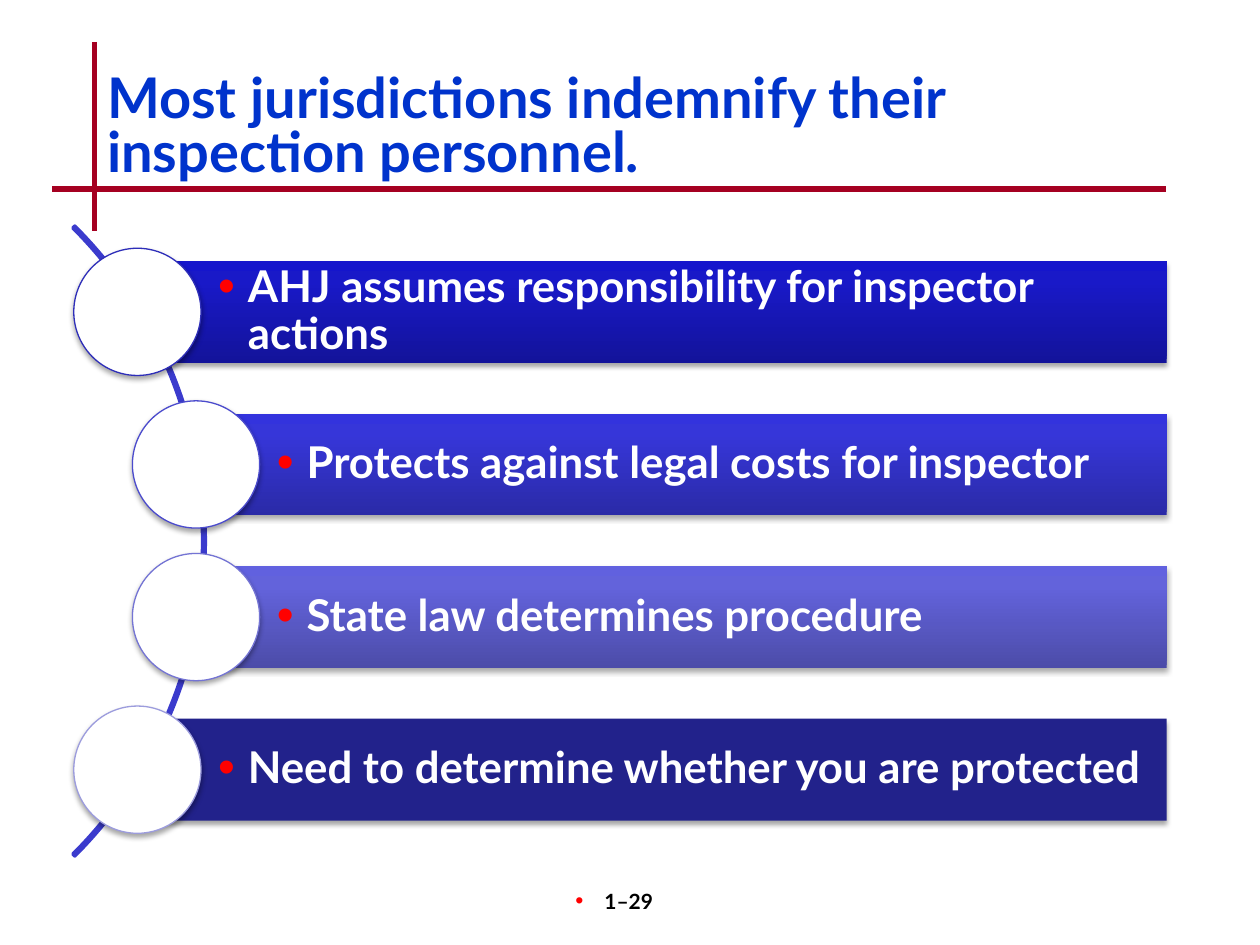
from lxml import etree
from pptx import Presentation
from pptx.dml.color import RGBColor
from pptx.enum.shapes import MSO_CONNECTOR, MSO_SHAPE
from pptx.enum.text import MSO_ANCHOR, MSO_AUTO_SIZE, PP_ALIGN
from pptx.oxml.ns import qn
from pptx.util import Pt

LINE = MSO_CONNECTOR.STRAIGHT
RECT, OVAL, ARC = MSO_SHAPE.RECTANGLE, MSO_SHAPE.OVAL, MSO_SHAPE.BLOCK_ARC
LEFT, CENTER = PP_ALIGN.LEFT, PP_ALIGN.CENTER
TOP, MIDDLE, NONE = MSO_ANCHOR.TOP, MSO_ANCHOR.MIDDLE, MSO_AUTO_SIZE.NONE

WHITE = RGBColor(0xFF, 0xFF, 0xFF)
BLACK = RGBColor(0, 0, 0)
BLUE = RGBColor(0x00, 0x33, 0xCC)
MAROON = RGBColor(0xA5, 0x00, 0x21)
CURVE = RGBColor(0x3B, 0x3B, 0xCD)
NAVY = RGBColor(0x22, 0x22, 0x8B)

# Content
TITLE = "Most jurisdictions indemnify their inspection personnel."
PAGE = "1–29"
# text, bar left, gradient from bottom to top (or solid fill), ring colour
ROWS = [
    ("AHJ assumes responsibility for inspector actions", 78.5,
     ["13139A", "1919C8", "1515CC"], RGBColor(0x2E, 0x2E, 0xB9)),
    ("Protects against legal costs for inspector", 112,
     ["2A2AA7", "3636D9", "3333DD"], RGBColor(0x4B, 0x4B, 0xCD)),
    ("State law determines procedure", 112,
     ["4C4CA9", "6363DB", "6161DF"], RGBColor(0x74, 0x74, 0xD4)),
    ("Need to determine whether you are protected", 78.5,
     NAVY, RGBColor(0x9C, 0x9C, 0xDD)),
]
RULES = [(54, 24, 54, 132), (30, 108, 666, 108)]

# Layout
STOPS = (0, 80000, 100000)
RIGHT, BAR, RING = 666.7, 58.2, 72.7
FIRST, STEP = 178.2, 87.2

prs = Presentation()
prs.slide_width, prs.slide_height = Pt(720), Pt(540)
slide = prs.slides.add_slide(prs.slide_layouts[5])
shapes = slide.shapes


def add(parent, tag, **attrs):
    node = etree.SubElement(parent, qn(tag))
    for key, val in attrs.items():
        node.set(key, str(val))
    return node


def place(shape, *box):
    for key, val in zip(("left", "top", "width", "height"), box):
        setattr(shape, key, Pt(val))


def write(shape, text, size, color, align=LEFT, space=1.0, bullet=None,
          insets=(7.2, 3.6, 7.2, 3.6), anchor=MIDDLE):
    frame = shape.text_frame
    look = dict(word_wrap=True, auto_size=NONE, vertical_anchor=anchor)
    sides = ("margin_left", "margin_top", "margin_right", "margin_bottom")
    look.update(zip(sides, map(Pt, insets)))
    for key, val in look.items():
        setattr(frame, key, val)
    para = frame.paragraphs[0]
    para.text, para.alignment, para.line_spacing = text, align, space
    if bullet:
        margin, indent = bullet
        props = para._p.get_or_add_pPr()
        props.set("marL", str(Pt(margin)))
        props.set("indent", str(Pt(indent)))
        add(add(props, "a:buClr"), "a:srgbClr", val="FF0000")
        add(props, "a:buSzPct", val=110000)
        add(props, "a:buFont", typeface="Arial")
        add(props, "a:buChar", char="•")
    font = para.runs[0].font
    for key, val in dict(name="Lato", size=Pt(size), bold=True).items():
        setattr(font, key, val)
    font.color.rgb = color


def draw(kind, box, fill=None, line=None, width=0.75, shade=True):
    shape = shapes.add_shape(kind, *map(Pt, box))
    shape.shadow.inherit = False
    if isinstance(fill, list):
        shape.fill.gradient()
        shape.fill.gradient_angle = 90
        stops = shape._element.spPr.find(".//" + qn("a:gsLst"))
        for old in list(stops):
            stops.remove(old)
        for pos, color in zip(STOPS, fill):
            add(add(stops, "a:gs", pos=pos), "a:srgbClr", val=color)
    elif fill is not None:
        shape.fill.solid()
        shape.fill.fore_color.rgb = fill
    else:
        shape.fill.background()
    if line is not None:
        shape.line.color.rgb, shape.line.width = line, Pt(width)
    else:
        shape.line.fill.background()
    if shade:
        effects = shape._element.spPr.find(qn("a:effectLst"))
        drop = add(effects, "a:outerShdw", blurRad=Pt(3.1), dist=Pt(1.8),
                   dir=5400000, rotWithShape=0)
        add(add(drop, "a:srgbClr", val="000000"), "a:alpha", val=35000)
    return shape


# Crossed rules
for ends in RULES:
    rule = shapes.add_connector(LINE, *map(Pt, ends))
    rule.line.color.rgb, rule.line.width = MAROON, Pt(3)
    add(rule._element.spPr, "a:effectLst")

# Title and page number
title = shapes.title
place(title, 54, 32, 612, 84)
write(title, TITLE, 32, BLUE, space=0.8)
page = shapes.add_textbox(Pt(282), Pt(504), Pt(150), Pt(36))
write(page, PAGE, 12, BLACK, CENTER, bullet=(3, -16.5), anchor=TOP)

# Curve behind the rows
arc = draw(ARC, (-391.7, 54.7, 509, 509), line=CURVE, width=2, shade=False)
for i, val in enumerate((189, 27, 0.003)):
    arc.adjustments[i] = val

# Bars with rings centred on their left ends
for i, (text, left, fill, edge) in enumerate(ROWS):
    mid = FIRST + i * STEP
    bar = draw(RECT, (left, mid - BAR / 2, RIGHT - left, BAR), fill)
    write(bar, text, 25, WHITE, space=0.9, bullet=(17, -17),
          insets=(46.2, 5, 5, 5))
    draw(OVAL, (left - RING / 2, mid - RING / 2, RING, RING), WHITE, edge)

prs.save("out.pptx")
